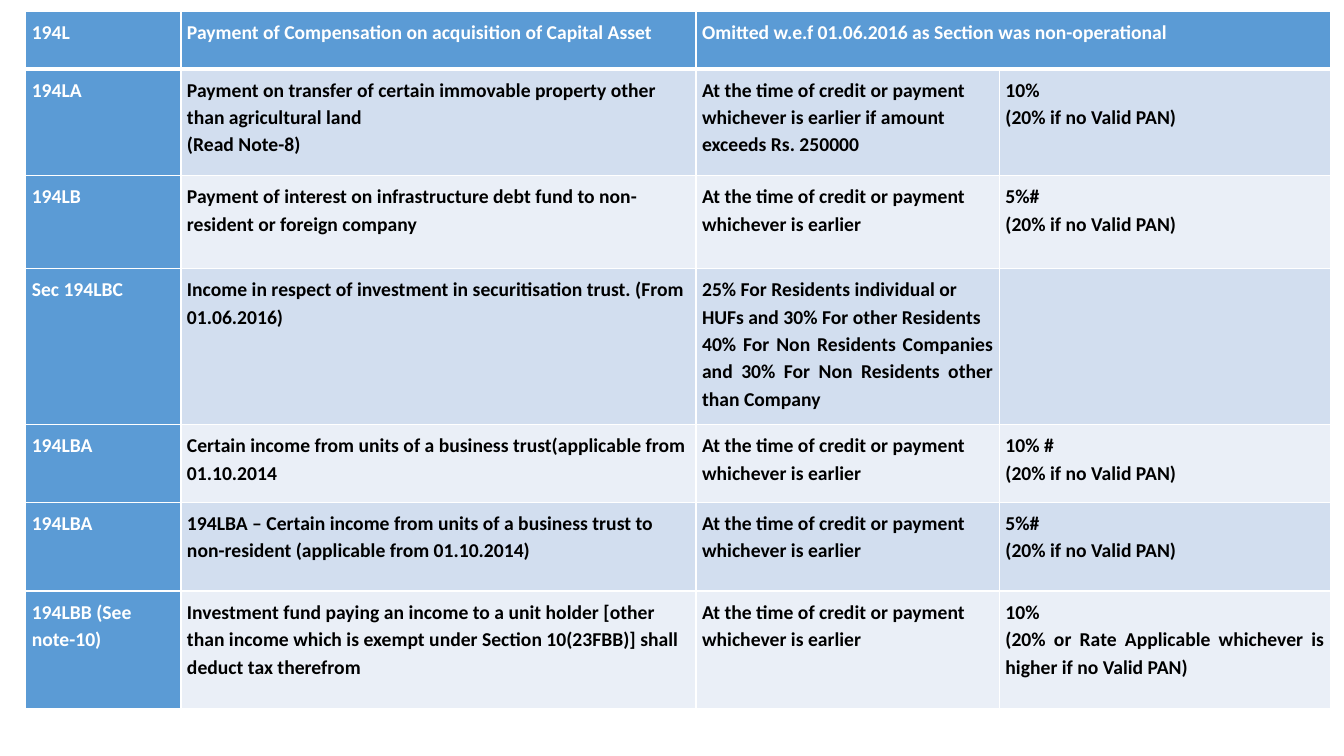
from dataclasses import dataclass

import lxml.etree
import pptx
import pptx.dml.color
import pptx.enum.text
import pptx.oxml.ns
import pptx.util

WHITE = pptx.dml.color.RGBColor(0xFF, 0xFF, 0xFF)
BLACK = pptx.dml.color.RGBColor(0x00, 0x00, 0x00)
BLUE = pptx.dml.color.RGBColor(0x5B, 0x9B, 0xD5)
BAND_COLOURS = (
    pptx.dml.color.RGBColor(0xEA, 0xEF, 0xF7),
    pptx.dml.color.RGBColor(0xD2, 0xDE, 0xEF),
)

COLUMN_WIDTHS = (110.88, 367.92, 216.72, 236.5)
CELL_MARGIN = 4.32
THIN, THICK = 1, 3
ON_PAYMENT = "At the time of credit or payment whichever is earlier"
NO_PAN = "(20% if no Valid PAN)"


@dataclass(frozen=True)
class TaxSection:
    height: float
    section: str
    nature: str
    timing: str
    rate: str = ""


TAX_SECTIONS = (
    TaxSection(
        41.04,
        "194L",
        "Payment of Compensation on acquisition of Capital Asset",
        "Omitted w.e.f 01.06.2016 as Section was non-operational",
    ),
    TaxSection(
        76.32,
        "194LA",
        "Payment on transfer of certain immovable property other than agricultural land\n(Read Note-8)",
        f"{ON_PAYMENT} if amount exceeds Rs. 250000",
        f"10%\n{NO_PAN}",
    ),
    TaxSection(
        66.24,
        "194LB",
        "Payment of interest on infrastructure debt fund to non-resident or foreign company",
        ON_PAYMENT,
        f"5%#\n{NO_PAN}",
    ),
    TaxSection(
        111.6,
        "Sec 194LBC",
        "Income in respect of investment in securitisation trust. (From 01.06.2016)",
        "25% For Residents individual or HUFs and 30% For other Residents\n"
        "40% For Non Residents Companies and 30% For Non Residents other than Company",
    ),
    TaxSection(
        55.44,
        "194LBA",
        "Certain income from units of a business trust(applicable from 01.10.2014",
        ON_PAYMENT,
        f"10% #\n{NO_PAN}",
    ),
    TaxSection(
        63.36,
        "194LBA",
        "194LBA – Certain income from units of a business trust to non-resident (applicable from 01.10.2014)",
        ON_PAYMENT,
        f"5%#\n{NO_PAN}",
    ),
    TaxSection(
        84.24,
        "194LBB (See note-10)",
        "Investment fund paying an income to a unit holder [other than income which is exempt "
        "under Section 10(23FBB)] shall deduct tax therefrom",
        ON_PAYMENT,
        "10%\n(20% or Rate Applicable whichever is higher if no Valid PAN)",
    ),
)


def set_borders(cell, top: float, bottom: float) -> None:
    properties = cell._tc.get_or_add_tcPr()
    sides = (("lnL", THIN), ("lnR", THIN), ("lnT", top), ("lnB", bottom))
    for position, (side, width) in enumerate(sides):
        border = lxml.etree.Element(
            pptx.oxml.ns.qn(f"a:{side}"), w=str(pptx.util.Pt(width))
        )
        fill = lxml.etree.SubElement(border, pptx.oxml.ns.qn("a:solidFill"))
        lxml.etree.SubElement(fill, pptx.oxml.ns.qn("a:srgbClr"), val=str(WHITE))
        properties.insert(position, border)


def fill_cell(cell, text: str, row: int, column: int) -> None:
    heading = row == 0 or column == 0
    cell.text = text
    cell.margin_left = cell.margin_right = pptx.util.Pt(CELL_MARGIN)
    cell.margin_top = cell.margin_bottom = pptx.util.Pt(CELL_MARGIN)
    cell.fill.solid()
    cell.fill.fore_color.rgb = BLUE if heading else BAND_COLOURS[row % 2]
    set_borders(cell, THICK if row == 1 else THIN, THICK if row == 0 else THIN)
    for index, paragraph in enumerate(cell.text_frame.paragraphs):
        paragraph.line_spacing = 1.15
        if index > 0:
            paragraph.alignment = pptx.enum.text.PP_ALIGN.JUSTIFY
        paragraph.font.name = "Calibri"
        paragraph.font.size = pptx.util.Pt(14)
        paragraph.font.bold = True
        paragraph.font.color.rgb = WHITE if heading else BLACK


def add_tax_table(slide) -> None:
    table = slide.shapes.add_table(
        len(TAX_SECTIONS),
        len(COLUMN_WIDTHS),
        pptx.util.Pt(18.4),
        pptx.util.Pt(8.2),
        pptx.util.Pt(sum(COLUMN_WIDTHS)),
        pptx.util.Pt(sum(entry.height for entry in TAX_SECTIONS)),
    ).table
    table.first_col = True
    for column, width in enumerate(COLUMN_WIDTHS):
        table.columns[column].width = pptx.util.Pt(width)
    for row, entry in enumerate(TAX_SECTIONS):
        table.rows[row].height = pptx.util.Pt(entry.height)
        texts = (entry.section, entry.nature, entry.timing, entry.rate)
        for column, text in enumerate(texts):
            fill_cell(table.cell(row, column), text, row, column)
    table.cell(0, 2).merge(table.cell(0, 3))


def main() -> None:
    presentation = pptx.Presentation()
    presentation.slide_width = pptx.util.Pt(960)
    presentation.slide_height = pptx.util.Pt(540)
    add_tax_table(presentation.slides.add_slide(presentation.slide_layouts[6]))
    presentation.save("out.pptx")


if __name__ == "__main__":
    main()
